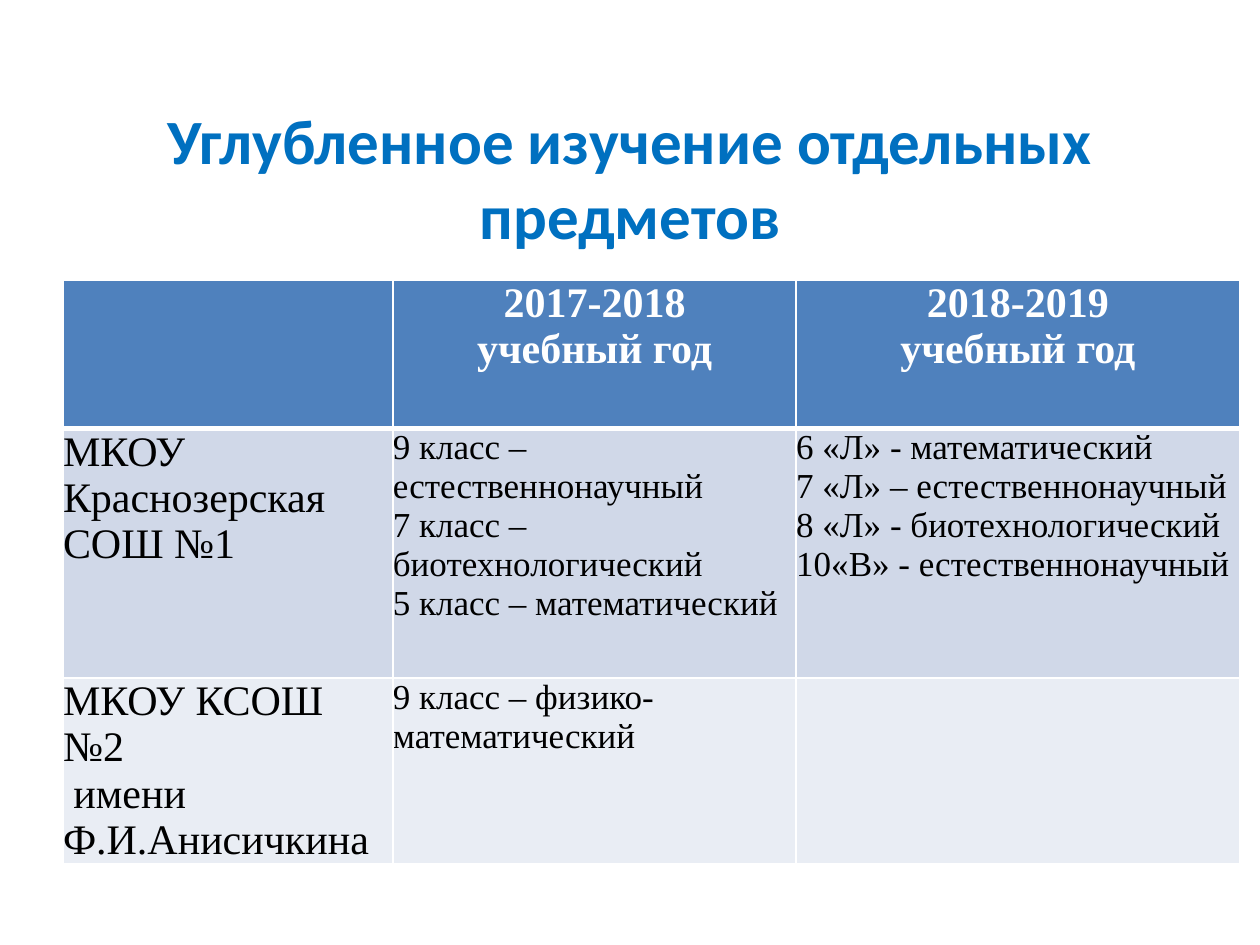
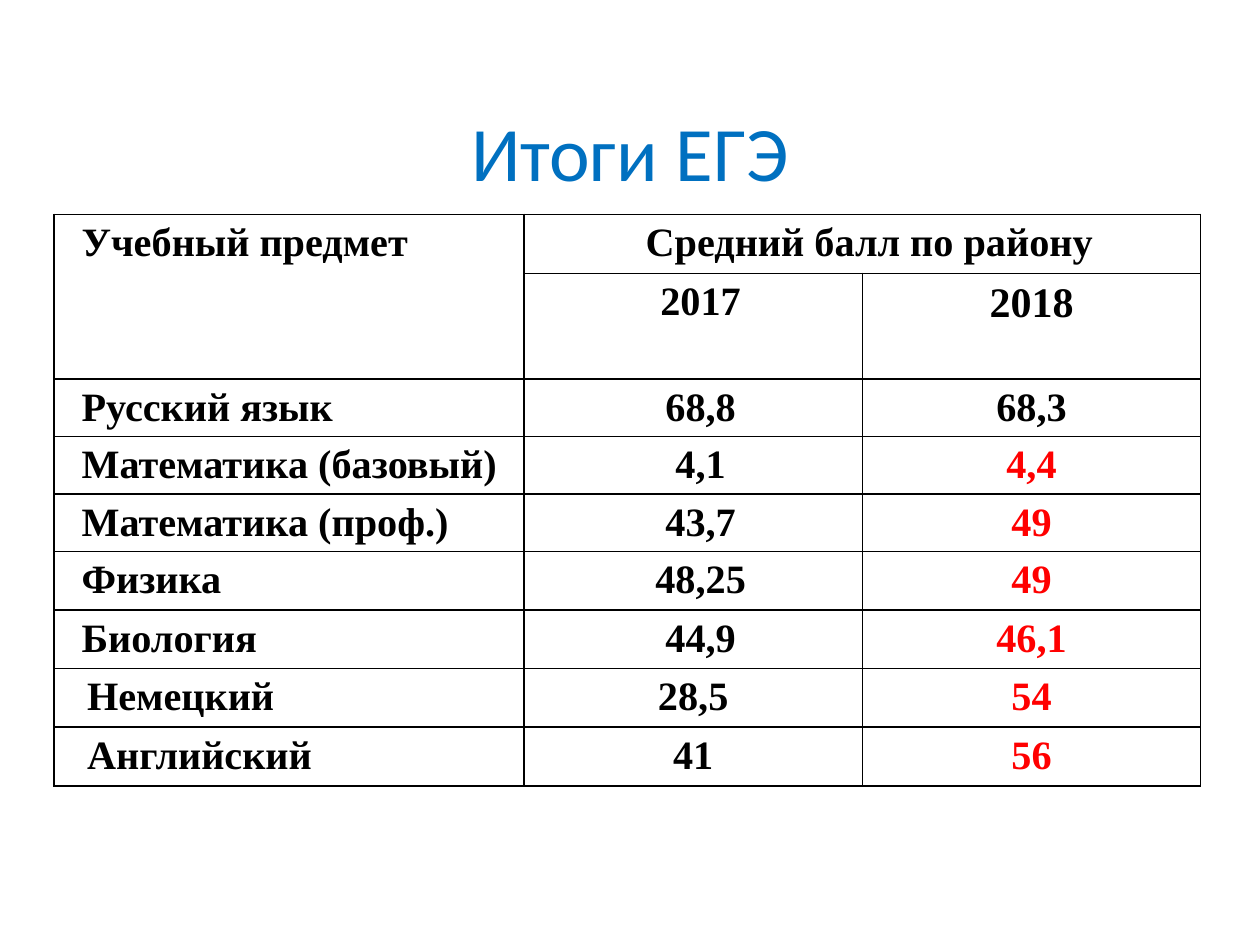
from lxml import etree
from pptx import Presentation
from pptx.dml.color import RGBColor
from pptx.enum.text import MSO_ANCHOR, MSO_AUTO_SIZE, PP_ALIGN
from pptx.oxml.ns import qn
from pptx.util import Cm, Pt

LEFT, CENTER = PP_ALIGN.LEFT, PP_ALIGN.CENTER
MIDDLE = MSO_ANCHOR.MIDDLE
NO_AUTOFIT = MSO_AUTO_SIZE.NONE

COLORS = {
    "title": "0070C0",
    "header": "4F81BD",
    "band_dark": "D0D8E8",
    "band_light": "E9EDF4",
    "white": "FFFFFF",
    "black": "000000",
    "growth": "FF0000",
}
TITLE_FONT, TABLE_FONT = "Calibri", "Times New Roman"
TITLE_ONLY = 5

SCHOOLS = [
    [[], ["2017-2018", "учебный год"], ["2018-2019", "учебный год"]],
    [
        ["МКОУ Краснозерская", "СОШ №1"],
        ["9 класс – естественнонаучный", "7 класс – биотехнологический",
         "5 класс – математический"],
        ["6 «Л» - математический", "7 «Л» – естественнонаучный",
         "8 «Л» - биотехнологический", "10«В» - естественнонаучный"],
    ],
    [
        ["МКОУ КСОШ №2", "имени Ф.И.Анисичкина"],
        ["9 класс – физико-математический"],
        [],
    ],
]
SCORES = [
    ("Русский язык", "68,8", "68,3"),
    ("Математика (базовый)", "4,1", "4,4"),
    ("Математика (проф.)", "43,7", "49"),
    ("Физика", "48,25", "49"),
    ("Биология", "44,9", "46,1"),
    ("Немецкий", "28,5", "54"),
    ("Английский", "41", "56"),
]
LANGUAGES = ("Немецкий", "Английский")


def style_font(p, name, size, color, bold):
    p.font.name = name
    p.font.size = Pt(size)
    p.font.bold = bold
    p.font.color.rgb = RGBColor.from_string(COLORS[color])


def add_titled_slide(prs, text, top, height, size, bold):
    slide = prs.slides.add_slide(prs.slide_layouts[TITLE_ONLY])
    title = slide.shapes.title
    title.left, title.top = Cm(1.27), Cm(top)
    title.width, title.height = Cm(22.86), Cm(height)
    tf = title.text_frame
    tf.text = text
    tf.auto_size = NO_AUTOFIT
    tf.vertical_anchor = MIDDLE
    p = tf.paragraphs[0]
    p.alignment = CENTER
    style_font(p, TITLE_FONT, size, "title", bold)
    return slide


def add_plain_table(slide, left, top, col_widths, row_heights):
    """Add a table without the banded style."""
    sp = slide.shapes.add_table(
        len(row_heights), len(col_widths), Cm(left), Cm(top),
        Cm(sum(col_widths)), Cm(sum(row_heights)))
    table = sp.table
    table.first_row = table.horz_banding = False
    for col, width in zip(table.columns, col_widths):
        col.width = Cm(width)
    for row, height in zip(table.rows, row_heights):
        row.height = Cm(height)
    return table


def set_borders(cell, color, top=1, bottom=1):
    """Draw all four sides; call before the fill is set."""
    tcPr = cell._tc.get_or_add_tcPr()
    for side, width in (("L", 1), ("R", 1), ("T", top), ("B", bottom)):
        ln = etree.SubElement(tcPr, qn("a:ln" + side), w=str(Pt(width)))
        fill = etree.SubElement(ln, qn("a:solidFill"))
        etree.SubElement(fill, qn("a:srgbClr"), val=COLORS[color])


def fill_cell(cell, color):
    cell.fill.solid()
    cell.fill.fore_color.rgb = RGBColor.from_string(COLORS[color])


def indent(p, margin=0, first_line=0):
    pPr = p._p.get_or_add_pPr()
    pPr.set("marL", str(Cm(margin)))
    pPr.set("indent", str(Cm(first_line)))


def write_cell(cell, lines, size, color="black", bold=False, align=LEFT, margin=0):
    tf = cell.text_frame
    tf.text = "\n".join(lines)
    for p in tf.paragraphs:
        indent(p, margin)
        p.alignment = align
        style_font(p, TABLE_FONT, size, color, bold)


def add_school_table(slide):
    table = add_plain_table(slide, 1.27, 5.64, [6.65, 8.13, 8.94], [3, 5.03, 3.73])
    fills = ["header", "band_dark", "band_light"]
    for r, row in enumerate(SCHOOLS):
        for c, lines in enumerate(row):
            cell = table.cell(r, c)
            set_borders(cell, "white", top=3 if r == 1 else 1, bottom=3 if r == 0 else 1)
            fill_cell(cell, fills[r])
            cell.margin_left = cell.margin_right = 0
            cell.margin_top = cell.margin_bottom = 0
            if r == 0:
                write_cell(cell, lines, 24, "white", True, CENTER)
            else:
                write_cell(cell, lines, 24 if c == 0 else 20)
    indent(table.cell(2, 0).text_frame.paragraphs[1], first_line=0.21)


def add_score_table(slide):
    heights = [1.19, 2.13] + [1.16] * 3 + [1.18] * 4
    table = add_plain_table(slide, 1.09, 4.32, [9.47, 6.83, 6.81], heights)
    for cell in table.iter_cells():
        set_borders(cell, "black")
        fill_cell(cell, "white")
    table.cell(0, 0).merge(table.cell(1, 0))
    table.cell(0, 1).merge(table.cell(0, 2))

    write_cell(table.cell(0, 0), ["Учебный предмет"], 23, bold=True, margin=0.3)
    write_cell(table.cell(0, 1), ["Средний балл по району"], 23,
               bold=True, align=CENTER, margin=0.3)
    write_cell(table.cell(1, 1), ["2017"], 23, bold=True, align=CENTER, margin=0.3)
    write_cell(table.cell(1, 2), ["2018"], 24, bold=True, align=CENTER)

    for r, (subject, before, after) in enumerate(SCORES, start=2):
        is_language = subject in LANGUAGES
        color = "black" if subject == "Русский язык" else "growth"
        write_cell(table.cell(r, 0), [subject], 23, bold=True,
                   margin=0.41 if is_language else 0.3)
        write_cell(table.cell(r, 1), [before], 23, bold=True, align=CENTER,
                   margin=0 if is_language else 0.3)
        write_cell(table.cell(r, 2), [after], 23, color, True, CENTER)


def main():
    prs = Presentation()
    prs.slide_width, prs.slide_height = Cm(25.4), Cm(19.05)
    add_school_table(add_titled_slide(
        prs, "Углубленное изучение отдельных предметов", 2.18, 2.77, 36, True))
    add_score_table(add_titled_slide(prs, "Итоги ЕГЭ", 1.93, 2.21, 44, False))
    prs.save("out.pptx")


if __name__ == "__main__":
    main()
